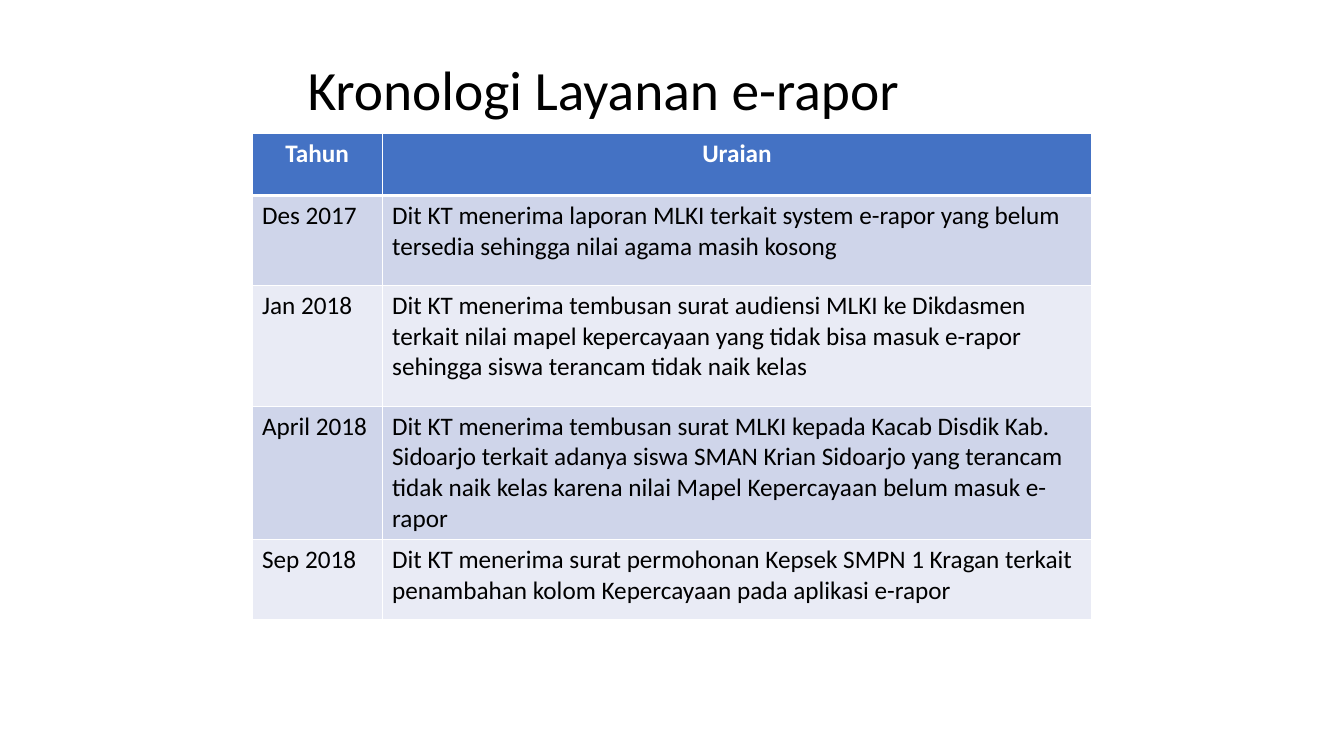
from lxml import etree
from pptx import Presentation
from pptx.dml.color import RGBColor
from pptx.enum.text import MSO_ANCHOR, MSO_AUTO_SIZE, PP_ALIGN
from pptx.oxml.ns import qn
from pptx.util import Inches, Pt

LEFT, CENTER = PP_ALIGN.LEFT, PP_ALIGN.CENTER
MIDDLE = MSO_ANCHOR.MIDDLE
NO_AUTOFIT = MSO_AUTO_SIZE.NONE

BLACK = RGBColor(0x00, 0x00, 0x00)
WHITE = RGBColor(0xFF, 0xFF, 0xFF)
HEADER_BLUE = RGBColor(0x44, 0x72, 0xC4)
BAND_DARK = RGBColor(0xCF, 0xD5, 0xEA)
BAND_LIGHT = RGBColor(0xE9, 0xEB, 0xF5)

CHRONOLOGY = [
    ("Tahun", "Uraian"),
    ("Des 2017", "Dit KT menerima laporan MLKI terkait system e-rapor yang belum "
                 "tersedia sehingga nilai agama masih kosong"),
    ("Jan 2018", "Dit KT menerima tembusan surat audiensi MLKI ke Dikdasmen terkait "
                 "nilai mapel kepercayaan yang tidak bisa masuk e-rapor sehingga "
                 "siswa terancam tidak naik kelas"),
    ("April 2018", "Dit KT menerima tembusan surat MLKI kepada Kacab Disdik Kab. "
                   "Sidoarjo terkait adanya siswa SMAN Krian Sidoarjo yang terancam "
                   "tidak naik kelas karena nilai Mapel Kepercayaan belum masuk e-rapor"),
    ("Sep 2018", "Dit KT menerima surat permohonan Kepsek SMPN 1 Kragan terkait "
                 "penambahan kolom Kepercayaan pada aplikasi e-rapor"),
]
COLUMN_WIDTHS = [1.29, 7.04]
ROW_HEIGHTS = [0.62, 0.89, 1.2, 1.21, 0.8]


def format_font(font, **values):
    font.name = "Calibri"
    font.color.rgb = values.pop("color")
    for name, value in values.items():
        setattr(font, name, value)


def set_borders(cell, widths):
    properties = cell._tc.get_or_add_tcPr()
    for position, (side, width) in enumerate(widths.items()):
        line = etree.Element(qn(f"a:ln{side}"), w=str(Pt(width)))
        fill = etree.SubElement(line, qn("a:solidFill"))
        etree.SubElement(fill, qn("a:srgbClr"), val=str(WHITE))
        properties.insert(position, line)


prs = Presentation()
prs.slide_width, prs.slide_height = Inches(13.33), Inches(7.5)
slide = prs.slides.add_slide(prs.slide_layouts[5])

# Title
title = slide.shapes.title
title.left, title.top = Inches(2.95), Inches(0.67)
title.width, title.height = Inches(7.44), Inches(0.5)
title.text_frame.text = "Kronologi Layanan e-rapor"
title.text_frame.vertical_anchor = MIDDLE
title.text_frame.auto_size = NO_AUTOFIT
heading = title.text_frame.paragraphs[0]
heading.alignment = LEFT
heading.line_spacing = 0.9
format_font(heading.runs[0].font, size=Pt(39.6), color=BLACK)

# Chronology table
chronology = slide.shapes.add_table(
    len(CHRONOLOGY), len(COLUMN_WIDTHS), Inches(2.5), Inches(1.32),
    Inches(sum(COLUMN_WIDTHS)), Inches(sum(ROW_HEIGHTS))).table
for column, width in zip(chronology.columns, COLUMN_WIDTHS):
    column.width = Inches(width)
for row, height in zip(chronology.rows, ROW_HEIGHTS):
    row.height = Inches(height)

# Header row, then alternating bands
for r, entry in enumerate(CHRONOLOGY):
    is_header = r == 0
    band = HEADER_BLUE if is_header else BAND_DARK if r % 2 else BAND_LIGHT
    borders = {"L": 1, "R": 1, "T": 3 if r == 1 else 1, "B": 3 if is_header else 1}
    for c, text in enumerate(entry):
        cell = chronology.cell(r, c)
        cell.text = text
        cell.fill.solid()
        cell.fill.fore_color.rgb = band
        set_borders(cell, borders)
        paragraph = cell.text_frame.paragraphs[0]
        paragraph.alignment = CENTER if is_header else LEFT
        format_font(paragraph.runs[0].font, size=Pt(18), bold=is_header,
                    color=WHITE if is_header else BLACK)

prs.save("out.pptx")
